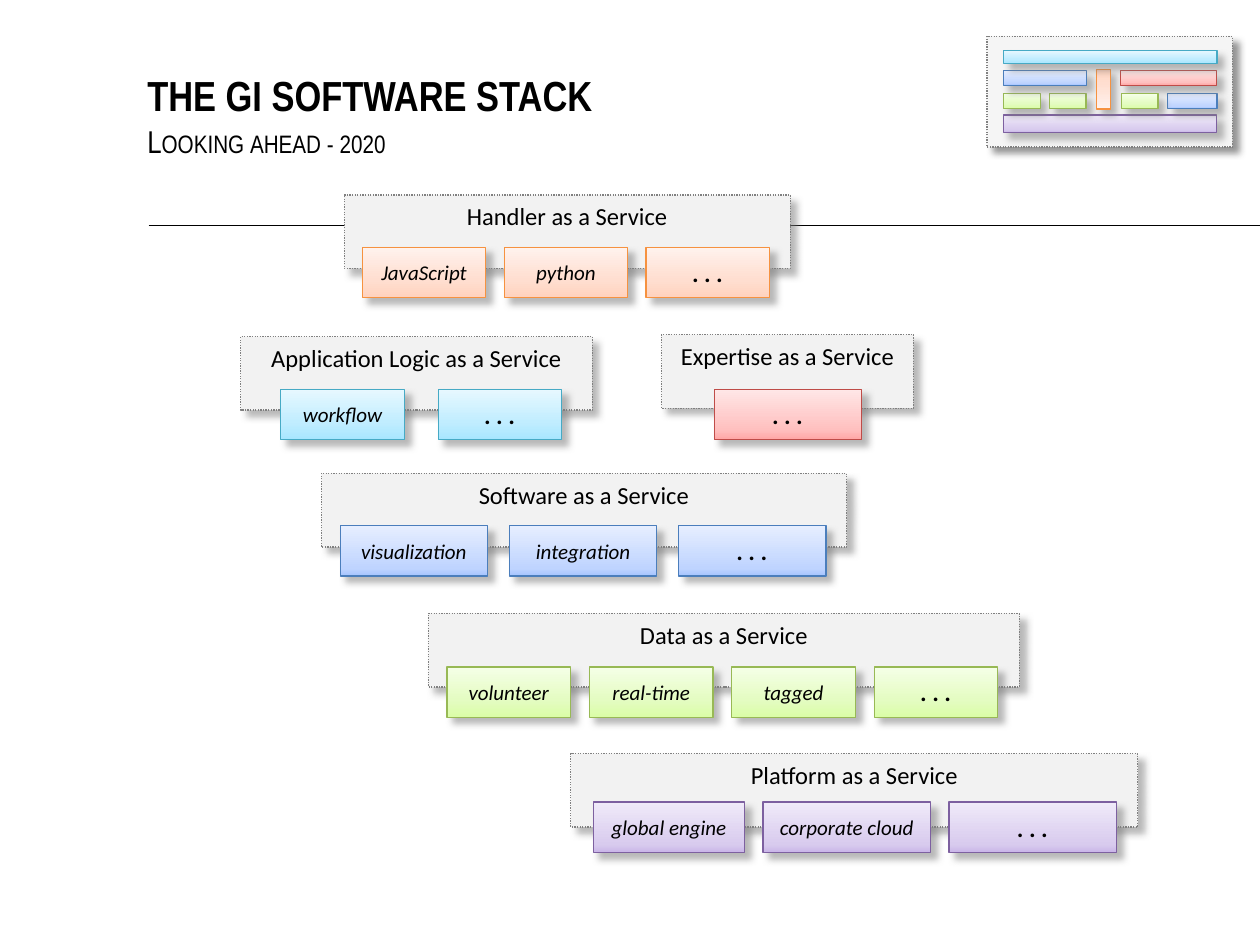
from copy import deepcopy
from typing import NamedTuple

from lxml.etree import SubElement
from pptx import Presentation
from pptx.dml.color import RGBColor
from pptx.enum.dml import MSO_LINE
from pptx.enum.shapes import MSO_CONNECTOR, MSO_SHAPE
from pptx.enum.text import MSO_ANCHOR, PP_ALIGN
from pptx.oxml.ns import qn
from pptx.util import Pt

COLORS = {"ink": "000000", "paper": "FFFFFF", "panel": "F2F2F2",
          "edge": "808080", "dark": "404040"}
EDGES = {"purple": "7D60A0", "green": "98B955", "blue": "4B7EBC",
         "orange": "F69240", "red": "BF4C48", "cyan": "46AAC5"}
FADES = {
    "purple": ((0, "C9B5E8"), (0.15, "D8CBEE"), (1, "F0EAF9")),
    "green": ((0, "DAFDA7"), (0.35, "E4FCC2"), (1, "F5FFE7")),
    "blue": ((0, "A4C4FF"), (0.15, "BFD4FF"), (1, "E6EEFF")),
    "orange": ((0, "FFD2BD"), (0.35, "FFDED0"), (1, "FFF2ED")),
    "red": ((0, "FFA6A5"), (0.2, "FFC0BF"), (1, "FFE7E7")),
    "cyan": ((0, "A7E6FF"), (0.35, "C1EDFF"), (1, "E7F8FF")),
}
MORE = ". . ."


class Box(NamedTuple):
    left: float
    top: float
    width: float
    height: float


class Tier(NamedTuple):
    label: str
    hue: str
    left: float
    top: float
    width: float
    start: float      # left edge of the first tile
    row: float        # top edge of the tiles
    gap: float
    tiles: tuple      # (text, width) pairs


class Bar(NamedTuple):
    hue: str
    box: Box
    turn: int = 0


TIERS = (
    Tier("Platform as a Service", "purple", 326.2, 430.6, 324, 339.1, 458.3, 10.5,
         (("global engine", 86.4), ("corporate cloud", 95.8), (MORE, 95.8))),
    Tier("Data as a Service", "green", 244.8, 350.6, 337.7, 255.4, 381.1, 10.8,
         (("volunteer", 70.6), ("real-time", 70.6), ("tagged", 70.6), (MORE, 70.6))),
    Tier("Software as a Service", "blue", 183.6, 270.6, 300.2, 194.4, 300.4, 12.5,
         (("visualization", 84.2), ("integration", 84.2), (MORE, 84.2))),
    Tier("Handler as a Service", "orange", 196.7, 111.4, 254.9, 207, 141.3, 10.5,
         (("JavaScript", 70.6), ("python", 70.6), (MORE, 70.6))),
    Tier("Application Logic as a Service", "cyan", 137.5, 192.4, 200.9, 160.4, 222.5, 19.4,
         (("workflow", 70.6), (MORE, 70.6))),
    Tier("Expertise as a Service", "red", 378, 191.3, 144, 408.2, 222.5, 0,
         ((MORE, 84.2),)),
)
BARS = (
    Bar("purple", Box(573.4, 65.8, 122, 10)),
    Bar("green", Box(573.4, 53.5, 21, 8.6)),
    Bar("green", Box(599.6, 53.5, 21, 8.6)),
    Bar("blue", Box(573.4, 40.4, 47.5, 8.4)),
    Bar("orange", Box(626.4, 39.5, 8, 22.8), 180),
    Bar("blue", Box(667.3, 53.5, 28.1, 8.6)),
    Bar("red", Box(640.3, 40.4, 55, 8.4)),
    Bar("green", Box(640.8, 53.5, 21, 8.6)),
    Bar("cyan", Box(573.6, 28.8, 121.8, 7.6)),
)


def rgb(code: str) -> RGBColor:
    return RGBColor.from_string(code)


def add_shade(shape, code: str) -> None:
    """Give the shape a soft shadow to the lower right."""
    shape.shadow.inherit = False
    effects = shape._element.spPr.find(qn("a:effectLst"))
    shade = SubElement(effects, qn("a:outerShdw"), blurRad=str(Pt(4)), dist=str(Pt(5)),
                       dir="2700000", algn="tl", rotWithShape="0")
    tint = SubElement(shade, qn("a:srgbClr"), val=code)
    SubElement(tint, qn("a:alpha"), val="55000")


def add_rect(slide, box: Box, edge: str):
    shape = slide.shapes.add_shape(MSO_SHAPE.RECTANGLE, *map(Pt, box))
    shape.shadow.inherit = False
    shape.line.color.rgb = rgb(edge)
    shape.line.width = Pt(0.75)
    return shape


def add_panel(slide, box: Box, fill: str):
    """Draw a flat box with a dotted edge."""
    shape = add_rect(slide, box, COLORS["edge"])
    shape.line.dash_style = MSO_LINE.ROUND_DOT
    shape.fill.solid()
    shape.fill.fore_color.rgb = rgb(fill)
    return shape


def add_tile(slide, box: Box, hue: str):
    """Draw a box that fades upwards through three tints of the hue."""
    shape = add_rect(slide, box, EDGES[hue])
    shape.fill.gradient()
    shape.fill.gradient_angle = 90
    stops = shape._element.spPr.find(".//" + qn("a:gsLst"))
    stops.append(deepcopy(stops[0]))
    for stop, (place, code) in zip(shape.fill.gradient_stops, FADES[hue]):
        stop.position = place
        stop.color.rgb = rgb(code)
    add_shade(shape, COLORS["edge"])
    return shape


def add_run(part, text: str, size: float, face: str = "Calibri",
            bold: bool = False, italic: bool = False):
    run = part.add_run()
    run.text = text
    font = run.font
    font.name, font.size = face, Pt(size)
    font.bold, font.italic = bold, italic
    font.color.rgb = rgb(COLORS["ink"])
    return run


def add_label(shape, text: str, size: float, anchor, **style) -> None:
    frame = shape.text_frame
    frame.word_wrap = True
    frame.vertical_anchor = anchor
    part = frame.paragraphs[0]
    part.alignment = PP_ALIGN.CENTER
    add_run(part, text, size, **style)


def add_tier(slide, tier: Tier) -> None:
    panel = add_panel(slide, Box(tier.left, tier.top, tier.width, 42), COLORS["panel"])
    add_shade(panel, COLORS["edge"])
    add_label(panel, tier.label, 14, MSO_ANCHOR.TOP)
    left = tier.start
    for text, width in tier.tiles:
        tile = add_tile(slide, Box(left, tier.row, width, 28.8), tier.hue)
        tile.text_frame.margin_left = tile.text_frame.margin_right = Pt(3.6)
        more = text == MORE
        add_label(tile, text, 14 if more else 12, MSO_ANCHOR.MIDDLE, bold=more, italic=True)
        left += width + tier.gap


def add_head(slide, box: Box, anchor):
    """Add a text box without margins and return its first paragraph."""
    frame = slide.shapes.add_textbox(*map(Pt, box)).text_frame
    frame.word_wrap = True
    frame.vertical_anchor = anchor
    frame.margin_left = frame.margin_right = frame.margin_top = frame.margin_bottom = 0
    return frame.paragraphs[0]


def add_key(slide) -> None:
    """Draw the small overview of the whole stack."""
    box = Box(564, 20.8, 140.2, 63.2)
    add_shade(add_panel(slide, box, COLORS["paper"]), COLORS["dark"])
    veil = add_panel(slide, box, COLORS["panel"])
    tint = veil._element.spPr.find(qn("a:solidFill"))[0]
    SubElement(tint, qn("a:alpha"), val="70000")
    for bar in BARS:
        add_tile(slide, bar.box, bar.hue).rotation = bar.turn


def main() -> None:
    deck = Presentation()
    deck.slide_width, deck.slide_height = Pt(720), Pt(540)
    slide = deck.slides.add_slide(deck.slide_layouts[6])

    rule = slide.shapes.add_connector(MSO_CONNECTOR.STRAIGHT, Pt(85), Pt(128.9), Pt(720), Pt(128.9))
    rule.line.color.rgb = rgb(COLORS["ink"])
    rule.line.width = Pt(1)
    SubElement(rule._element.spPr, qn("a:effectLst"))

    title = add_head(slide, Box(84.2, 23.8, 612, 44.6), MSO_ANCHOR.BOTTOM)
    add_run(title, "THE GI SOFTWARE STACK", 24, "Arial Narrow", bold=True)
    note = add_head(slide, Box(84.2, 66.2, 612, 18), MSO_ANCHOR.TOP)
    note.line_spacing = Pt(25)
    run = add_run(note, "Looking ahead - 2020", 18, "Arial Narrow")
    run.font._element.set("cap", "small")

    add_key(slide)
    for tier in TIERS:
        add_tier(slide, tier)
    deck.save("out.pptx")


if __name__ == "__main__":
    main()
